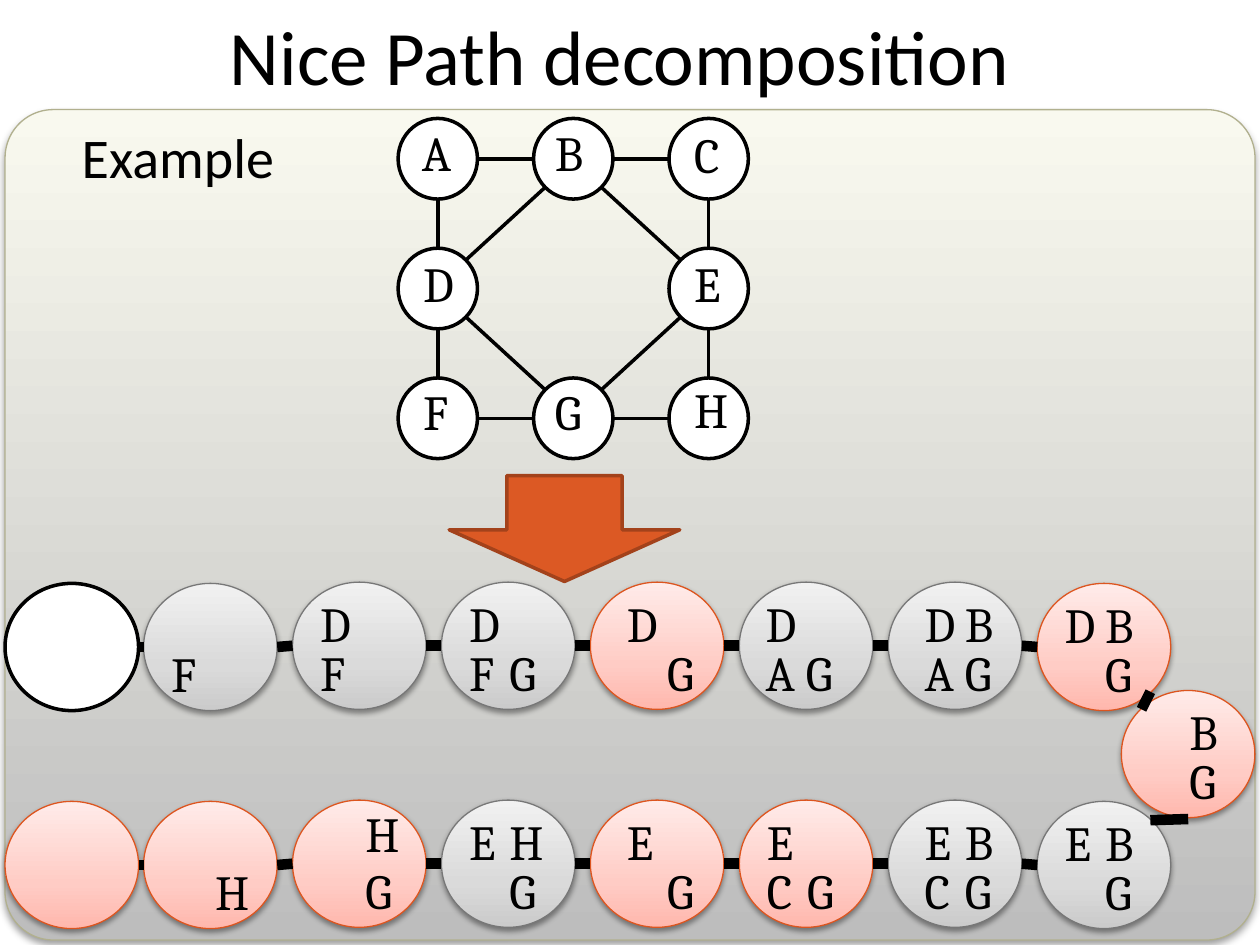
from math import hypot

from lxml import etree
from pptx import Presentation
from pptx.dml.color import RGBColor
from pptx.enum.shapes import MSO_CONNECTOR, MSO_SHAPE
from pptx.enum.text import MSO_ANCHOR, PP_ALIGN
from pptx.oxml.ns import qn
from pptx.util import Inches, Pt

OVAL, ARROW, PANEL = MSO_SHAPE.OVAL, MSO_SHAPE.RIGHT_ARROW, MSO_SHAPE.ROUNDED_RECTANGLE
STRAIGHT = MSO_CONNECTOR.STRAIGHT

BLACK = RGBColor(0x00, 0x00, 0x00)
WHITE = RGBColor(0xFF, 0xFF, 0xFF)
ORANGE = RGBColor(0xDC, 0x59, 0x24)
DARK_ORANGE = RGBColor(0xA3, 0x42, 0x1B)
OLIVE = RGBColor(0xB1, 0xB0, 0x8E)
GREY = RGBColor(0x77, 0x77, 0x77)
RED = RGBColor(0xDC, 0x55, 0x1F)

# Gradient stops run from bottom to top; shadow is opacity %, blur pt, distance pt
PANEL_STYLE = dict(fill=[(0, "BDBDBD"), (100, "F9F9EF")], line=OLIVE, width=0.75,
                   shadow=(40, 4, 3))
NODE_STYLE = dict(fill=WHITE, line=BLACK, width=2)
ARROW_STYLE = dict(fill=ORANGE, line=DARK_ORANGE, width=2)
BAG_STYLES = {
    "start": NODE_STYLE,
    "introduce": dict(fill=[(0, "CBCBCB"), (35, "DADADA"), (100, "F1F1F1")],
                      line=GREY, width=0.75, shadow=(38, 3.1, 1.6)),
    "forget": dict(fill=[(0, "FFB7AD"), (35, "FFCCC5"), (100, "FFEBE9")],
                   line=RED, width=0.75, shadow=(38, 3.1, 1.6)),
}

# vertex: column, row, offset of its letter from the circle
GRAPH = {
    "A": (0, 0, 0.09, -0.02), "B": (1, 0, 0.07, -0.02), "C": (2, 0, 0.10, 0),
    "D": (0, 1, 0.10, -0.01), "E": (2, 1, 0.10, -0.01),
    "F": (0, 2, 0.10, -0.02), "G": (1, 2, 0.07, -0.02), "H": (2, 2, 0.10, -0.04),
}
EDGES = ["AD", "DF", "AB", "DB", "BC", "BE", "CE", "EH", "HG", "GE", "DG", "FG"]

# bag: style, left inset of the letters, upper letters, lower letters
UPPER_BAGS = [
    ("start", 0.12, "", ""), ("introduce", 0.12, "", "F"),
    ("introduce", 0.12, "D", "F"), ("introduce", 0.12, "D", "FG"),
    ("forget", 0.19, "D", " G"), ("introduce", 0.11, "D", "AG"),
    ("introduce", 0.19, "DB", "AG"), ("forget", 0.12, "DB", " G"),
]
TURN_BAG = ("forget", 0.12, " B", " G")
LOWER_BAGS = [
    ("forget", 0.12, "", ""), ("forget", 0.15, "", " H"),
    ("forget", 0.16, " H", " G"), ("introduce", 0.12, "EH", " G"),
    ("forget", 0.19, "E", " G"), ("forget", 0.12, "E", "CG"),
    ("introduce", 0.19, "EB", "CG"), ("introduce", 0.12, "EB", " G"),
]
TURN_LINKS = [(9.13, 5.49, 9.06, 5.63), (9.43, 6.5, 9.13, 6.51)]

NODE_W, NODE_H = 0.63, 0.64
GRAPH_LEFT, GRAPH_TOP, NODE_DX, NODE_DY = 3.16, 0.94, 1.075, 1.03
BAG_W, BAG_H, BAG_STEP = 1.06, 1.01, 1.182
LETTER_STEP, LETTER_ROWS = 0.32, (0.04, 0.43)


def style_shape(shape, fill, line, width, shadow=None):
    if isinstance(fill, list):
        shape.fill.gradient()
        shape.fill.gradient_angle = 90
        stops = shape._element.spPr.find(".//" + qn("a:gsLst"))
        for old_stop in list(stops):
            stops.remove(old_stop)
        for percent, color in fill:
            stop = etree.SubElement(stops, qn("a:gs"), pos=str(percent * 1000))
            etree.SubElement(stop, qn("a:srgbClr"), val=color)
    else:
        shape.fill.solid()
        shape.fill.fore_color.rgb = fill
    shape.line.color.rgb = line
    shape.line.width = Pt(width)
    shape.shadow.inherit = False
    if shadow:
        opacity, blur, distance = shadow
        effects = shape._element.spPr.find(qn("a:effectLst"))
        outer = etree.SubElement(effects, qn("a:outerShdw"), blurRad=str(Pt(blur)),
                                 dist=str(Pt(distance)), dir="5400000", rotWithShape="0")
        color = etree.SubElement(outer, qn("a:srgbClr"), val="000000")
        etree.SubElement(color, qn("a:alpha"), val=str(opacity * 1000))


def add_styled(shapes, preset, box, style):
    shape = shapes.add_shape(preset, *map(Inches, box))
    style_shape(shape, **style)
    return shape


def write(frame, words, size, font):
    frame.word_wrap = True
    frame.text = words
    letters = frame.paragraphs[0].runs[0].font
    for key, value in dict(size=Pt(size), name=font).items():
        setattr(letters, key, value)
    letters.color.rgb = BLACK


def add_letter(shapes, letter, left, top):
    box = shapes.add_textbox(Inches(left), Inches(top), Inches(0.45), Inches(0.57))
    write(box.text_frame, letter, 28, "Cambria")


def add_link(shapes, ends, width):
    link = shapes.add_connector(STRAIGHT, *map(Inches, ends))
    link.line.color.rgb = BLACK
    link.line.width = Pt(width)
    etree.SubElement(link._element.spPr, qn("a:effectLst"))


def edge_ends(start, end):
    """Both ends of an edge, on the rims of its two circles."""
    (col1, row1), (col2, row2) = GRAPH[start][:2], GRAPH[end][:2]
    length = hypot(col2 - col1, row2 - row1)
    rim_x = (col2 - col1) / length * NODE_W / 2
    rim_y = (row2 - row1) / length * NODE_H / 2
    x1, x2 = (GRAPH_LEFT + NODE_W / 2 + col * NODE_DX for col in (col1, col2))
    y1, y2 = (GRAPH_TOP + NODE_H / 2 + row * NODE_DY for row in (row1, row2))
    return x1 + rim_x, y1 + rim_y, x2 - rim_x, y2 - rim_y


def add_graph(slide):
    shapes = slide.shapes.add_group_shape().shapes
    corners = {vertex: (GRAPH_LEFT + col * NODE_DX, GRAPH_TOP + row * NODE_DY)
               for vertex, (col, row, _, _) in GRAPH.items()}
    for left, top in corners.values():
        add_styled(shapes, OVAL, (left, top, NODE_W, NODE_H), NODE_STYLE)
    for start, end in EDGES:
        add_link(shapes, edge_ends(start, end), 2)
    for vertex, (left, top) in corners.items():
        dx, dy = GRAPH[vertex][2:]
        add_letter(shapes, vertex, left + dx, top + dy)


def add_bag(slide, bag, left, top):
    kind, inset, *letter_rows = bag
    shapes = slide.shapes
    if any(letter_rows):
        shapes = shapes.add_group_shape().shapes
    add_styled(shapes, OVAL, (left, top, BAG_W, BAG_H), BAG_STYLES[kind])
    for letters, dy in zip(letter_rows, LETTER_ROWS):
        for col, letter in enumerate(letters):
            if letter != " ":
                # The H that stands above G alone sits slightly higher
                lift = 0.06 if letters == " H" and dy == LETTER_ROWS[0] else 0
                add_letter(shapes, letter, left + inset + col * LETTER_STEP, top + dy - lift)


def add_bag_row(slide, bags, row_top):
    """Draw one row of bags and return the links between neighbours."""
    corners = [(0.04 if col == 0 else 1.14 + (col - 1) * BAG_STEP,
                row_top + (0.01 if col in (0, 1, 7) else 0)) for col in range(len(bags))]
    for bag, corner in zip(bags, corners):
        add_bag(slide, bag, *corner)
    return [(x1 + BAG_W, y1 + BAG_H / 2, x2, y2 + BAG_H / 2)
            for (x1, y1), (x2, y2) in zip(corners, corners[1:])]


def main():
    deck = Presentation()
    deck.slide_width, deck.slide_height = Inches(10), Inches(7.5)
    slide = deck.slides.add_slide(deck.slide_layouts[5])

    panel = add_styled(slide.shapes, PANEL, (0.04, 0.87, 9.92, 6.59), PANEL_STYLE)
    panel.adjustments[0] = 0.058

    title = slide.shapes.title
    title.left, title.top, title.width, title.height = map(Inches, (0.42, -0.19, 9, 1.25))
    write(title.text_frame, "Nice Path decomposition", 44, "Calibri")
    title.text_frame.vertical_anchor = MSO_ANCHOR.MIDDLE
    title.text_frame.paragraphs[0].alignment = PP_ALIGN.CENTER

    example = slide.shapes.add_textbox(*map(Inches, (0.55, 0.92, 2.42, 0.64)))
    write(example.text_frame, "Example", 32, "Calibri")

    add_graph(slide)
    links = add_bag_row(slide, UPPER_BAGS, 4.62)
    add_bag(slide, TURN_BAG, 8.9, 5.48)
    links += TURN_LINKS + add_bag_row(slide, LOWER_BAGS, 6.35)
    for ends in links:
        add_link(slide.shapes, ends, 6)

    arrow = add_styled(slide.shapes, ARROW, (4.06, 3.28, 0.84, 1.83), ARROW_STYLE)
    arrow.rotation = 90
    arrow.adjustments[1] = 0.488

    deck.save("out.pptx")


if __name__ == "__main__":
    main()
